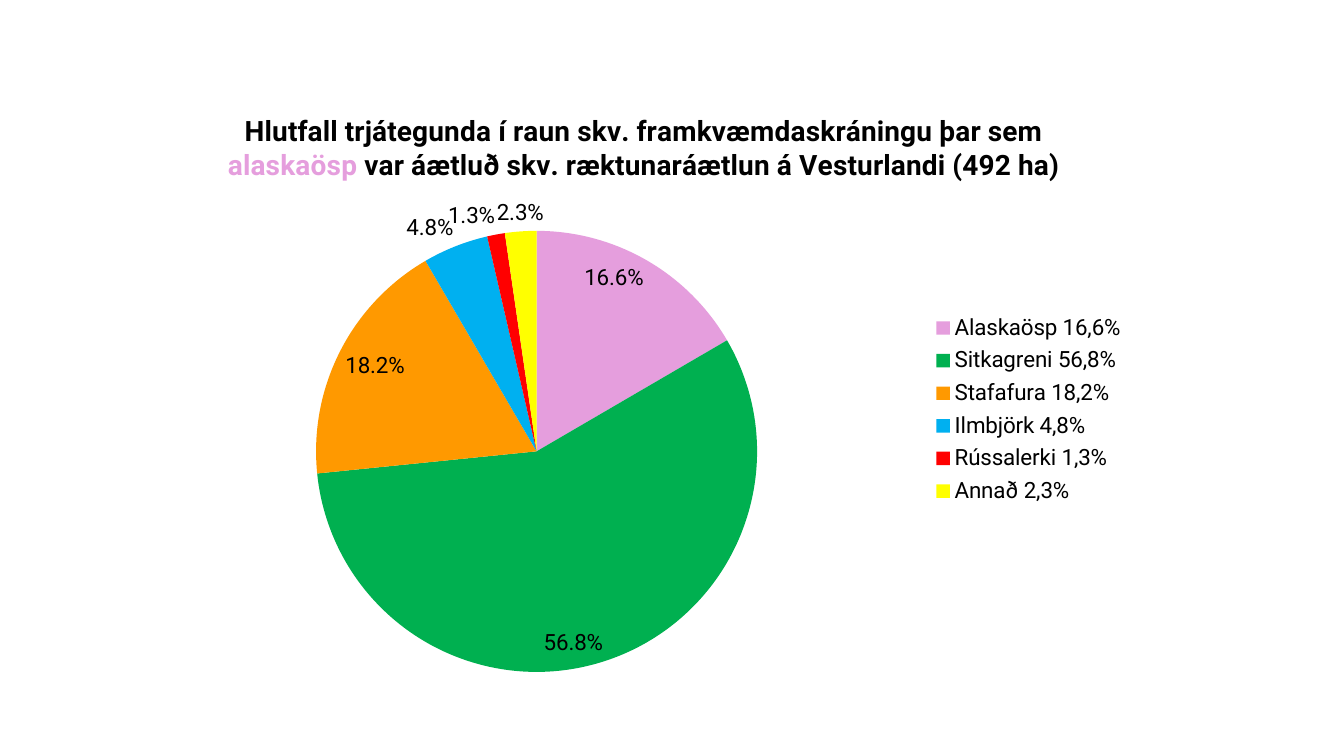
from lxml import etree
from pptx import Presentation
from pptx.chart.data import CategoryChartData
from pptx.dml.color import RGBColor
from pptx.enum.chart import XL_CHART_TYPE, XL_LABEL_POSITION, XL_LEGEND_POSITION
from pptx.oxml.ns import qn
from pptx.util import Cm, Pt

PIE = XL_CHART_TYPE.PIE
INSIDE = XL_LABEL_POSITION.INSIDE_END
OUTSIDE = XL_LABEL_POSITION.OUTSIDE_END
RIGHT = XL_LEGEND_POSITION.RIGHT

FONT = "Roboto"
PERCENT = "0.0%"
COLORS = {
    "text": "000000",
    "aspen": "E59EDD",
    "spruce": "00B050",
    "pine": "FF9900",
    "birch": "00B0F0",
    "larch": "FF0000",
    "other": "FFFF00",
}
SPECIES = [
    ("Alaskaösp 16,6%", 0.166, "aspen"),
    ("Sitkagreni 56,8%", 0.568, "spruce"),
    ("Stafafura 18,2%", 0.182, "pine"),
    ("Ilmbjörk 4,8%", 0.048, "birch"),
    ("Rússalerki 1,3%", 0.013, "larch"),
    ("Annað 2,3%", 0.023, "other"),
]
TITLE = [
    ("Hlutfall trjátegunda í raun skv. framkvæmdaskráningu þar sem ", "text"),
    ("alaskaösp", "aspen"),
    (" var áætluð skv. ræktunaráætlun á Vesturlandi (492 ha)", "text"),
]


def style_font(font, size, color="text", bold=False):
    font.name = FONT
    font.size = Pt(size)
    font.bold = bold
    font.color.rgb = RGBColor.from_string(COLORS[color])


def set_layout(parent, x, y, width, height, inner=False):
    layout = parent.get_or_add_layout()
    manual = layout.get_or_add_manualLayout()
    for child in list(manual):
        manual.remove(child)
    settings = [("layoutTarget", "inner")] if inner else []
    settings += [("xMode", "edge"), ("yMode", "edge"),
                 ("x", x), ("y", y), ("w", width), ("h", height)]
    for name, value in settings:
        etree.SubElement(manual, qn("c:" + name)).set("val", str(value))


def get_layout_element(parent, position):
    layout = parent.find(qn("c:layout"))
    if layout is None:
        layout = etree.Element(qn("c:layout"))
        parent.insert(position, layout)
    return layout


def place(parent, position, x, y, width, height, inner=False):
    layout = get_layout_element(parent, position)
    for child in list(layout):
        layout.remove(child)
    manual = etree.SubElement(layout, qn("c:manualLayout"))
    settings = [("layoutTarget", "inner")] if inner else []
    settings += [("xMode", "edge"), ("yMode", "edge"),
                 ("x", x), ("y", y), ("w", width), ("h", height)]
    for name, value in settings:
        etree.SubElement(manual, qn("c:" + name)).set("val", str(value))


def add_title(chart):
    chart.has_title = True
    chart.chart_title.include_in_layout = False
    para = chart.chart_title.text_frame.paragraphs[0]
    for text, color in TITLE:
        span = para.add_run()
        span.text = text
        style_font(span.font, 20, color, bold=True)


def add_legend(chart):
    chart.has_legend = True
    legend = chart.legend
    legend.position = RIGHT
    legend.include_in_layout = False
    style_font(legend.font, 16)
    place(legend._element, 1, 0.75, 0.36, 0.18, 0.34)


def style_slices(plot):
    plot.vary_by_categories = True
    plot.has_data_labels = True
    labels = plot.data_labels
    labels.show_value = True
    labels.show_percentage = False
    labels.number_format = PERCENT
    labels.number_format_is_linked = False
    style_font(labels.font, 16)
    for index, (_, share, color) in enumerate(SPECIES):
        point = plot.series[0].points[index]
        point.format.fill.solid()
        point.format.fill.fore_color.rgb = RGBColor.from_string(COLORS[color])
        point.format.line.fill.background()
        style_font(point.data_label.font, 16)
        point.data_label.position = INSIDE if share > 0.1 else OUTSIDE


def add_pie(page):
    data = CategoryChartData(number_format=PERCENT)
    data.categories = [name for name, _, _ in SPECIES]
    data.add_series("Series 1", [share for _, share, _ in SPECIES])
    frame = page.shapes.add_chart(PIE, Cm(1.98), Cm(2.34), Cm(28.5), Cm(15.06), data)
    chart = frame.chart
    style_font(chart.font, 10)
    add_title(chart)
    add_legend(chart)
    style_slices(chart.plots[0])
    plot_area = chart._chartSpace.find(".//" + qn("c:plotArea"))
    place(plot_area, 0, 0.21, 0.23, 0.39, 0.74, inner=True)


def main():
    deck = Presentation()
    deck.slide_width = Cm(33.87)
    deck.slide_height = Cm(19.05)
    page = deck.slides.add_slide(deck.slide_layouts[6])
    add_pie(page)
    deck.save("out.pptx")


if __name__ == "__main__":
    main()
